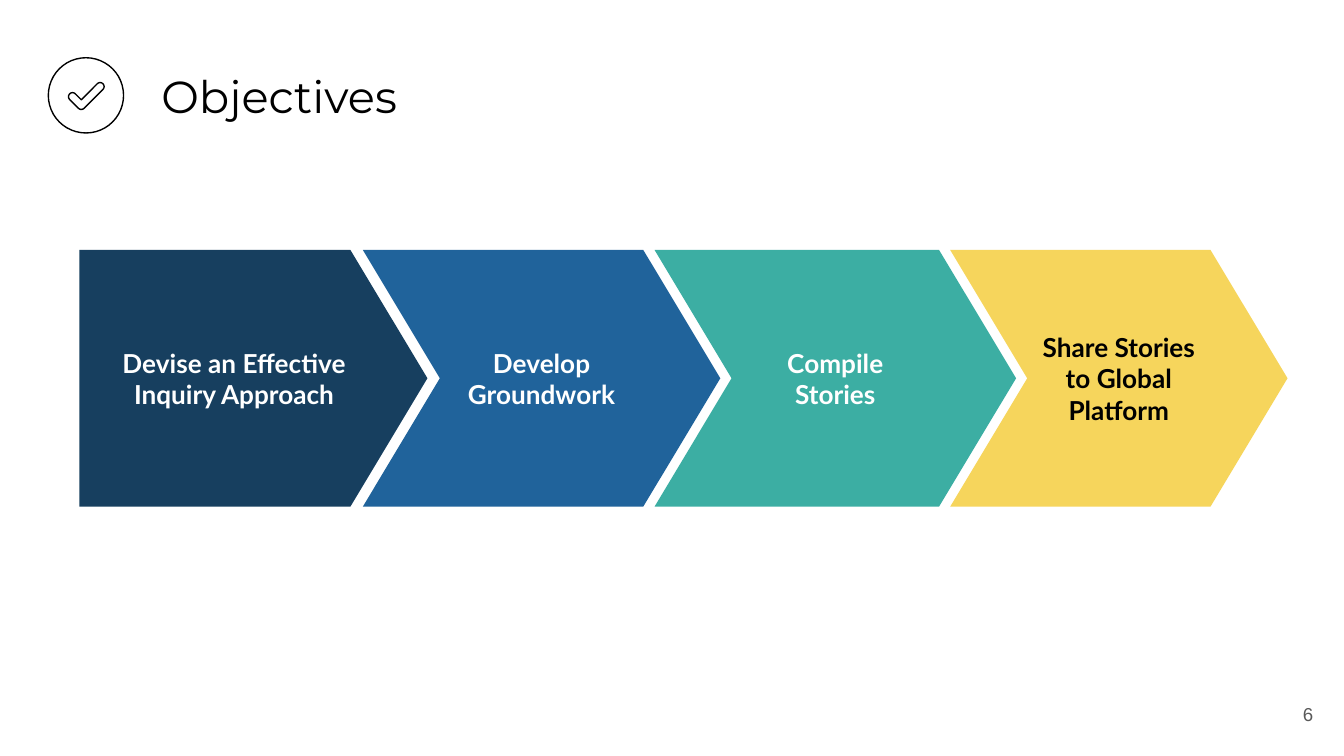
from dataclasses import dataclass
from math import cos, radians, sin

from pptx import Presentation, util as u
from pptx.dml.color import RGBColor
from pptx.enum import shapes, text

PX = 9144  # EMU per px, 100 px to the inch
WIDE = 1000 * PX
HIGH = WIDE * 9 // 16

BLACK = RGBColor(0x00, 0x00, 0x00)
WHITE = RGBColor(0xFF, 0xFF, 0xFF)
GRAY = RGBColor(0x59, 0x59, 0x59)
NAVY = RGBColor(0x17, 0x3F, 0x5F)
BLUE = RGBColor(0x20, 0x63, 0x9B)
TEAL = RGBColor(0x3C, 0xAE, 0xA3)
GOLD = RGBColor(0xF6, 0xD5, 0x5C)

PLATE = shapes.MSO_SHAPE.PENTAGON
ARROW = shapes.MSO_SHAPE.CHEVRON


@dataclass
class Step:
    label: str
    left: int
    width: int
    fill: RGBColor
    ink: RGBColor = WHITE
    kind: shapes.MSO_SHAPE = ARROW


@dataclass
class Arc:
    """Arc of the tick outline; lengths in tenths of a px."""
    x: int
    y: int
    start: int
    end: int


STEPS = [
    Step("Devise an Effective Inquiry Approach", 59, 259, NAVY, kind=PLATE),
    Step("Develop Groundwork", 270, 266, BLUE),
    Step("Compile Stories", 487, 269, TEAL),
    Step("Share Stories to Global Platform", 707, 251, GOLD, BLACK),
]
TICK = [Arc(540, 720, -45, -225), Arc(605, 785, 135, 45), Arc(745, 645, 45, -135)]
ROUND = 30  # radius of the tick's ends


def box(*px: int) -> list[u.Emu]:
    return [u.Emu(n * PX) for n in px]


def write(shape, words: str, font: str, size: int, ink: RGBColor,
          align: text.PP_ALIGN, bold: bool = False) -> None:
    frame = shape.text_frame
    frame.text = words
    frame.word_wrap = True
    frame.auto_size = text.MSO_AUTO_SIZE.NONE
    frame.vertical_anchor = text.MSO_ANCHOR.MIDDLE
    frame.margin_left = frame.margin_right = u.Emu(10 * PX)
    frame.margin_top = frame.margin_bottom = u.Emu(10 * PX)
    para = frame.paragraphs[0]
    para.alignment = align
    face = para.runs[0].font
    face.name, face.size, face.bold = font, u.Pt(size), bold
    face.color.rgb = ink


def draw_step(slide, step: Step) -> None:
    shape = slide.shapes.add_shape(step.kind, *box(step.left, 186, step.width, 191))
    shape.adjustments[0] = 0.3
    shape.shadow.inherit = False
    shape.fill.solid()
    shape.fill.fore_color.rgb = step.fill
    shape.line.fill.background()
    write(shape, step.label, "Lato", 14, step.ink, text.PP_ALIGN.CENTER, True)


def outline(shape) -> None:
    shape.shadow.inherit = False
    shape.fill.background()
    shape.line.color.rgb = BLACK
    shape.line.width = u.Pt(0.75)


def draw_icon(slide) -> None:
    outline(slide.shapes.add_shape(shapes.MSO_SHAPE.OVAL, *box(36, 43, 56, 56)))
    dots = [
        (arc.x + ROUND * cos(radians(turn)), arc.y + ROUND * sin(radians(turn)))
        for arc in TICK
        for turn in range(arc.start, arc.end - 1, -15)
    ]
    inner = (TICK[1].x, TICK[1].y - ROUND * 2 ** 0.5)
    pen = slide.shapes.build_freeform(*dots[0], scale=PX / 10)
    pen.add_line_segments([*dots[1:], inner], close=True)
    outline(pen.convert_to_shape())


def main() -> None:
    deck = Presentation()
    deck.slide_width, deck.slide_height = u.Emu(WIDE), u.Emu(HIGH)
    slide = deck.slides.add_slide(deck.slide_layouts[5])

    # Title
    title = slide.shapes.title
    title.left, title.top, title.width, title.height = box(110, 25, 788, 92)
    write(title, "Objectives", "Montserrat", 24, BLACK, text.PP_ALIGN.LEFT)

    # Page number
    page = slide.shapes.add_textbox(*box(927, 510, 60, 43))
    write(page, "6", "Arial", 10, GRAY, text.PP_ALIGN.RIGHT)

    # Row of arrows
    for step in STEPS:
        draw_step(slide, step)

    # Tick in a circle
    draw_icon(slide)

    deck.save("out.pptx")


if __name__ == "__main__":
    main()
